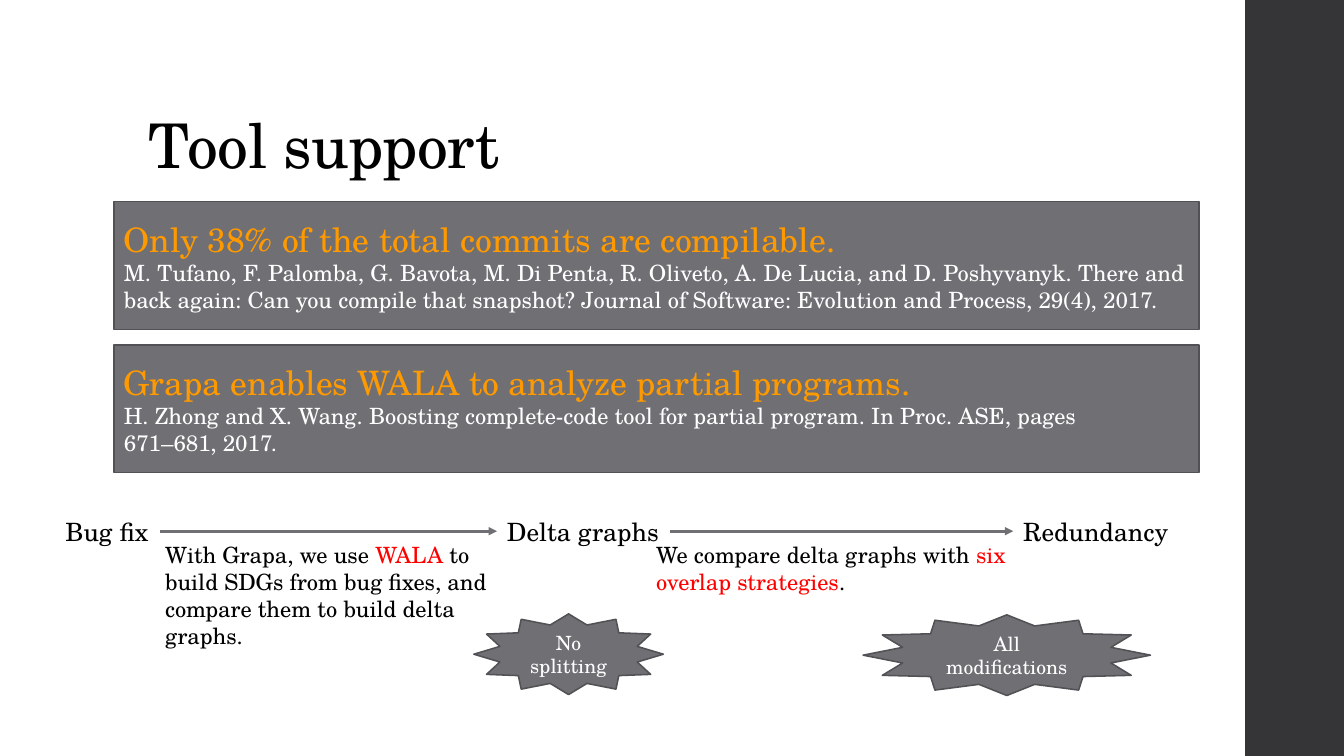
from dataclasses import dataclass
from itertools import pairwise

from lxml import etree
from pptx import Presentation
from pptx.dml.color import RGBColor
from pptx.enum.shapes import MSO_CONNECTOR, MSO_SHAPE
from pptx.enum.text import MSO_ANCHOR, PP_ALIGN
from pptx.oxml.ns import qn
from pptx.util import Inches, Pt

RECTANGLE, STAR = MSO_SHAPE.RECTANGLE, MSO_SHAPE.STAR_12_POINT
STRAIGHT = MSO_CONNECTOR.STRAIGHT
TOP, MIDDLE, BOTTOM = MSO_ANCHOR.TOP, MSO_ANCHOR.MIDDLE, MSO_ANCHOR.BOTTOM
LEFT, CENTER = PP_ALIGN.LEFT, PP_ALIGN.CENTER

BLACK = RGBColor(0x00, 0x00, 0x00)
WHITE = RGBColor(0xFF, 0xFF, 0xFF)
RED = RGBColor(0xFF, 0x00, 0x00)
ORANGE = RGBColor(0xFF, 0x99, 0x00)
GRAY = RGBColor(0x6F, 0x6F, 0x74)
OUTLINE = RGBColor(0x52, 0x52, 0x56)
CHARCOAL = RGBColor(0x35, 0x35, 0x37)

FONT = "TeX Gyre Schola"
WIDTH, HEIGHT = Inches(13.33), Inches(7.5)


@dataclass(frozen=True)
class Box:
    """Place and size in percent of the slide's width and height."""
    left: float
    top: float
    width: float
    height: float

    def emu(self) -> tuple[int, int, int, int]:
        return across(self.left), down(self.top), across(self.width), down(self.height)


@dataclass(frozen=True)
class Words:
    text: str
    size: float
    color: RGBColor = BLACK


@dataclass(frozen=True)
class Finding:
    claim: str
    citation: tuple[str, ...]


@dataclass(frozen=True)
class Stage:
    name: str
    left: float
    width: float


Lines = list[list[Words]]


def across(percent: float) -> int:
    return round(WIDTH * percent / 100)


def down(percent: float) -> int:
    return round(HEIGHT * percent / 100)


def write(frame, lines: Lines, anchor=TOP, align=LEFT, wrap=True) -> None:
    for name, value in {"word_wrap": wrap, "vertical_anchor": anchor}.items():
        setattr(frame, name, value)
    for index, line in enumerate(lines):
        paragraph = frame.add_paragraph() if index else frame.paragraphs[0]
        paragraph.alignment = align
        for words in line:
            run = paragraph.add_run()
            run.text = words.text
            for name, value in {"name": FONT, "size": Pt(words.size)}.items():
                setattr(run.font, name, value)
            run.font.color.rgb = words.color


def add_text(slide, box: Box, lines: Lines, anchor=TOP, wrap=True):
    frame = slide.shapes.add_textbox(*box.emu()).text_frame
    write(frame, lines, anchor, wrap=wrap)
    return frame


def add_filled(slide, kind, box: Box, fill: RGBColor, outlined=True):
    shape = slide.shapes.add_shape(kind, *box.emu())
    shape.shadow.inherit = False
    shape.fill.solid()
    shape.fill.fore_color.rgb = fill
    if outlined:
        shape.line.color.rgb = OUTLINE
        shape.line.width = Pt(1.1)
    else:
        shape.line.fill.background()
    return shape


def add_arrow(slide, start: float, end: float, level: float) -> None:
    arrow = slide.shapes.add_connector(
        STRAIGHT, across(start), down(level), across(end), down(level))
    arrow.line.color.rgb = GRAY
    arrow.line.width = Pt(2)
    etree.SubElement(arrow.line._get_or_add_ln(), qn("a:tailEnd"), type="triangle")
    etree.SubElement(arrow._element.spPr, qn("a:effectLst"))


SIDEBAR = Box(92.65, 0, 7.5, 100)
TITLE = Box(10.35, 5.33, 79.52, 19.33)

FIRST_FINDING, FINDING_PITCH = 26.67, 18.93
FINDINGS = [
    Finding("Only 38% of the total commits are compilable.", (
        "M. Tufano, F. Palomba, G. Bavota, M. Di Penta, R. Oliveto, A. De Lucia, "
        "and D. Poshyvanyk. There and back again: Can you compile that snapshot? "
        "Journal of Software: Evolution and Process, 29(4), 2017.",)),
    Finding("Grapa enables WALA to analyze partial programs.", (
        "H. Zhong and X. Wang. Boosting complete-code tool for partial program. "
        "In Proc. ASE, pages",
        "671–681, 2017.")),
]

STAGE_TOP, STAGE_HEIGHT = 67.6, 5.33
STAGES = [
    Stage("Bug fix", 4.13, 7.8),
    Stage("Delta graphs", 36.98, 12.9),
    Stage("Redundancy", 75.39, 12.38),
]

STEPS = [
    (Box(11.55, 70.93, 26.86, 15.73), [
        Words("With Grapa, we use ", 16),
        Words("WALA", 16, RED),
        Words(" to build SDGs from bug fixes, and compare them to build delta graphs.", 16)]),
    (Box(48.09, 70.93, 31.58, 8.53), [
        Words("We compare delta graphs with ", 16),
        Words("six overlap strategies", 16, RED),
        Words(".", 16)]),
]

BURSTS = [
    (Box(64.22, 81.33, 21.38, 10.67), "All modifications"),
    (Box(35.26, 81.2, 14.1, 10.67), "No splitting"),
]


def main() -> None:
    deck = Presentation()
    deck.slide_width, deck.slide_height = WIDTH, HEIGHT
    slide = deck.slides.add_slide(deck.slide_layouts[6])

    # Sidebar and title
    add_filled(slide, RECTANGLE, SIDEBAR, CHARCOAL, outlined=False)
    heading = add_text(slide, TITLE, [[Words("Tool support", 44)]], BOTTOM).paragraphs[0]
    heading.line_spacing = 0.9
    heading.runs[0]._r.get_or_add_rPr().set("spc", "-50")

    # Findings with their citations
    for row, finding in enumerate(FINDINGS):
        box = Box(8.48, FIRST_FINDING + row * FINDING_PITCH, 80.72, 16.93)
        panel = add_filled(slide, RECTANGLE, box, GRAY)
        citation = [[Words(line, 16, WHITE)] for line in finding.citation]
        write(panel.text_frame, [[Words(finding.claim, 24, ORANGE)], *citation], MIDDLE)

    # Stages joined by arrows
    for stage in STAGES:
        box = Box(stage.left, STAGE_TOP, stage.width, STAGE_HEIGHT)
        add_text(slide, box, [[Words(stage.name, 18)]], wrap=False)
    for before, after in pairwise(STAGES):
        add_arrow(slide, before.left + before.width, after.left,
                  STAGE_TOP + STAGE_HEIGHT / 2)

    # Explanation of each step
    for box, sentence in STEPS:
        add_text(slide, box, [sentence])

    # Starbursts
    for box, label in BURSTS:
        burst = add_filled(slide, STAR, box, GRAY)
        write(burst.text_frame, [[Words(label, 14, WHITE)]], MIDDLE, CENTER)

    deck.save("out.pptx")


if __name__ == "__main__":
    main()
